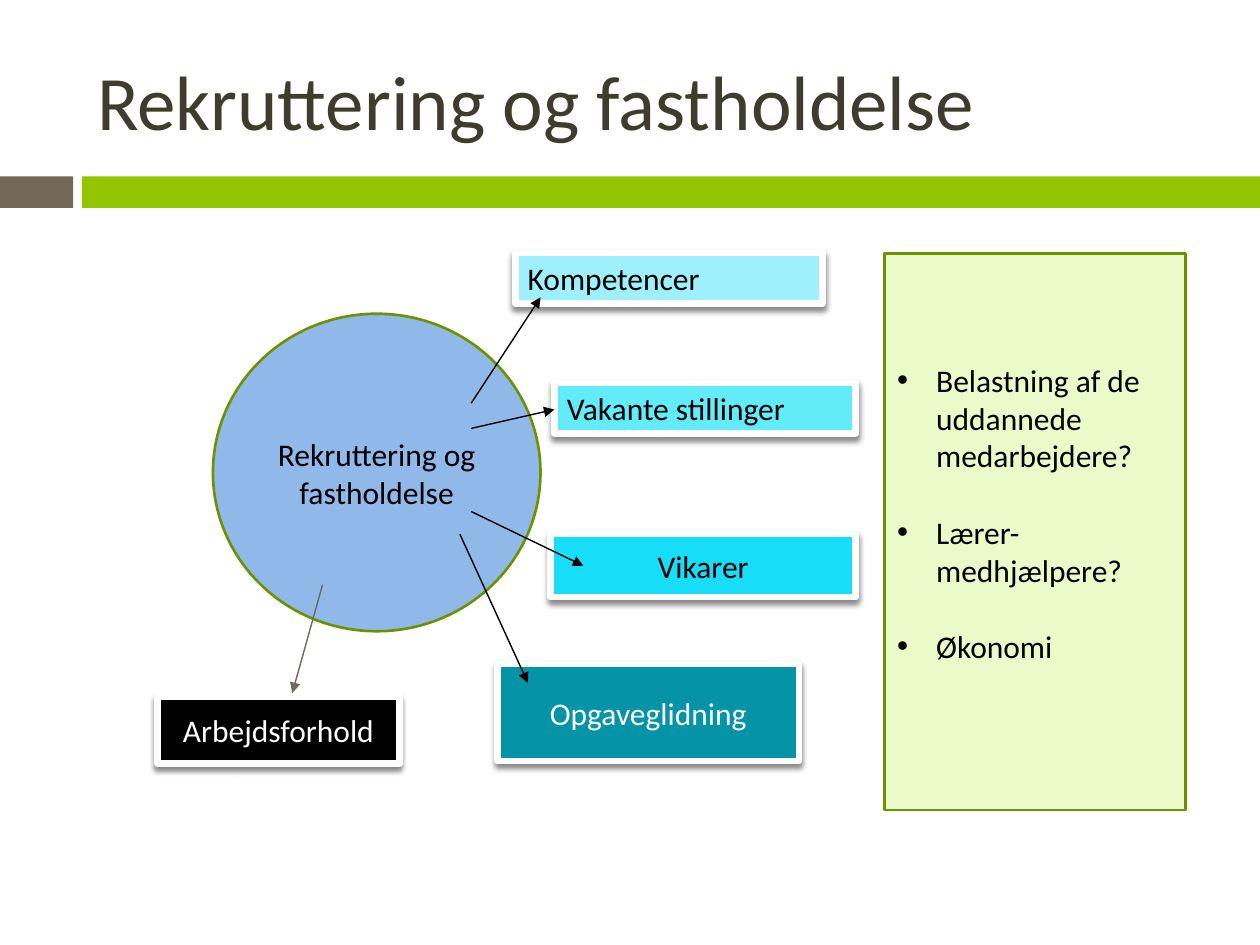
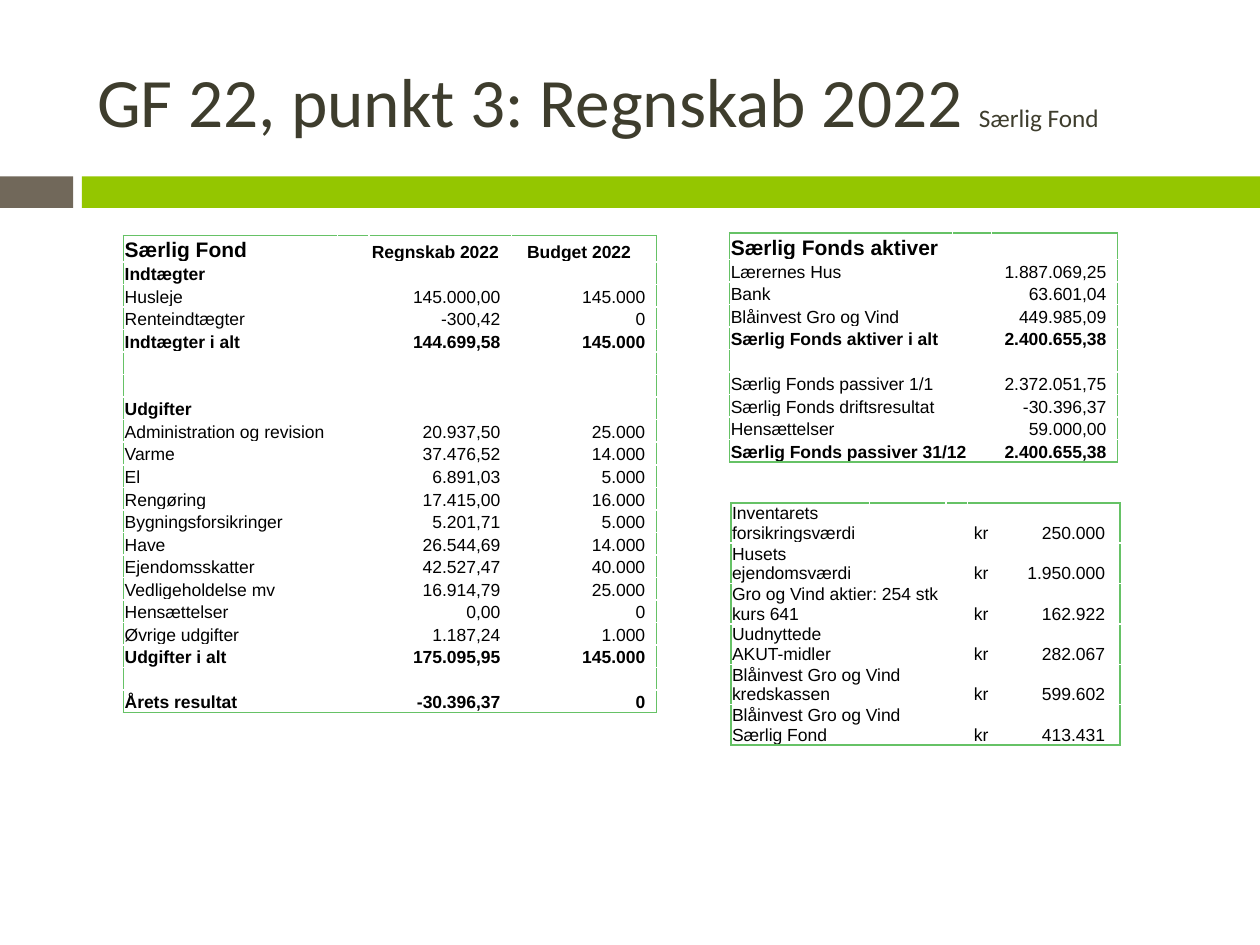
from dataclasses import dataclass

from lxml.etree import SubElement
from pptx import Presentation
from pptx.dml.color import RGBColor
from pptx.enum.shapes import MSO_CONNECTOR, MSO_SHAPE
from pptx.enum.text import MSO_ANCHOR, MSO_AUTO_SIZE, PP_ALIGN
from pptx.oxml import parse_xml
from pptx.oxml.ns import nsdecls, qn
from pptx.util import Inches, Pt


@dataclass(frozen=True)
class Theme:
    """Colours, fonts and type sizes of the slides."""

    font: str = "Calibri"
    table_font: str = "Arial"
    title: str = "3E3D2D"
    text: str = "000000"
    light: str = "FFFFFF"
    grey: str = "71685A"
    green: str = "94C600"
    outline: str = "6D9200"
    panel: str = "EAFAC9"
    circle: str = "90B8E8"
    table_border: str = "66C266"
    title_size: float = 44
    long_title_size: float = 39.6
    subtitle_size: float = 14.4
    body_size: float = 18
    table_title_size: float = 12
    table_size: float = 10


THEME = Theme()
LEFT, CENTER, RIGHT = PP_ALIGN.LEFT, PP_ALIGN.CENTER, PP_ALIGN.RIGHT

TOPICS = [
    ("Kompetencer", (4.09, 2.01, 2.44, 0.4), "9EF1FC", THEME.text, LEFT),
    ("Vakante stillinger", (4.4, 3.04, 2.39, 0.4), "62ECFA", THEME.text, LEFT),
    ("Vikarer", (4.37, 4.24, 2.42, 0.5), "18DDF8", THEME.text, CENTER),
    ("Opgaveglidning", (3.95, 5.27, 2.39, 0.77), "0594A7", THEME.light, CENTER),
    ("Arbejdsforhold", (1.25, 5.53, 1.92, 0.53), "000000", THEME.light, CENTER),
]
ARROWS = [
    ((3.74, 3.2, 4.29, 2.36), THEME.text),
    ((3.74, 3.4, 4.4, 3.25), THEME.text),
    ((3.74, 4.06, 4.63, 4.49), THEME.text),
    ((3.65, 4.24, 4.19, 5.42), THEME.text),
    ((2.56, 4.64, 2.32, 5.5), THEME.grey),
]
QUESTIONS = ["Belastning af de uddannede medarbejdere?", "Lærer-medhjælpere?", "Økonomi"]

ACCOUNTS = [
    ("Særlig Fond", "Regnskab 2022", "Budget 2022"),
    ("Indtægter",),
    ("Husleje", "145.000,00", "145.000"),
    ("Renteindtægter", "-300,42", "0"),
    ("Indtægter i alt", "144.699,58", "145.000"),
    (),
    (),
    ("Udgifter",),
    ("Administration og revision", "20.937,50", "25.000"),
    ("Varme", "37.476,52", "14.000"),
    ("El", "6.891,03", "5.000"),
    ("Rengøring", "17.415,00", "16.000"),
    ("Bygningsforsikringer", "5.201,71", "5.000"),
    ("Have", "26.544,69", "14.000"),
    ("Ejendomsskatter", "42.527,47", "40.000"),
    ("Vedligeholdelse mv", "16.914,79", "25.000"),
    ("Hensættelser", "0,00", "0"),
    ("Øvrige udgifter", "1.187,24", "1.000"),
    ("Udgifter i alt", "175.095,95", "145.000"),
    (),
    ("Årets resultat", "-30.396,37", "0"),
]
BALANCE = [
    ("Særlig Fonds aktiver",),
    ("Lærernes Hus", "1.887.069,25"),
    ("Bank", "63.601,04"),
    ("Blåinvest Gro og Vind", "449.985,09"),
    ("Særlig Fonds aktiver i alt", "2.400.655,38"),
    (),
    ("Særlig Fonds passiver 1/1", "2.372.051,75"),
    ("Særlig Fonds driftsresultat", "-30.396,37"),
    ("Hensættelser", "59.000,00"),
    ("Særlig Fonds passiver 31/12", "2.400.655,38"),
]
HOLDINGS = [
    ("Inventarets forsikringsværdi", "kr\t250.000"),
    ("Husets ejendomsværdi", "kr\t1.950.000"),
    ("Gro og Vind aktier: 254 stk kurs 641", "kr\t162.922"),
    ("Uudnyttede AKUT-midler", "kr\t282.067"),
    ("Blåinvest Gro og Vind kredskassen", "kr\t599.602"),
    ("Blåinvest Gro og Vind Særlig Fond", "kr\t413.431"),
]
BOLD_LABELS = {
    "Indtægter", "Indtægter i alt", "Udgifter", "Udgifter i alt", "Årets resultat",
    "Særlig Fonds aktiver i alt", "Særlig Fonds passiver 31/12",
}


def set_values(target, values):
    """Set each named attribute of the target."""
    for name, value in values.items():
        setattr(target, name, value)


def place(shape, box):
    """Move and size a shape in inches."""
    names = ("left", "top", "width", "height")
    set_values(shape, dict(zip(names, map(Inches, box))))


def add_run(paragraph, text, size, color=THEME.text, font=THEME.font, bold=False):
    """Add one formatted run of text."""
    run = paragraph.add_run()
    run.text = text
    set_values(run.font, {"name": font, "size": Pt(size), "bold": bold})
    run.font.color.rgb = RGBColor.from_string(color)


def paint(shape, fill, line=None, width=1.5):
    """Give a shape its fill and outline."""
    shape.fill.solid()
    shape.fill.fore_color.rgb = RGBColor.from_string(fill)
    if line:
        shape.line.color.rgb = RGBColor.from_string(line)
        shape.line.width = Pt(width)
    else:
        shape.line.fill.background()


def add_figure(slide, kind, box, fill, line=None, width=1.5):
    """Add a flat preset shape."""
    shape = slide.shapes.add_shape(kind, *map(Inches, box))
    shape.shadow.inherit = False
    paint(shape, fill, line, width)
    return shape


def add_label(shape, text, color, alignment):
    """Write one line of text in a shape."""
    set_values(shape.text_frame, {"word_wrap": True, "vertical_anchor": MSO_ANCHOR.MIDDLE})
    paragraph = shape.text_frame.paragraphs[0]
    paragraph.alignment = alignment
    add_run(paragraph, text, THEME.body_size, color)


def add_topic(slide, text, box, fill, color, alignment):
    """Add a white-framed topic box with a soft shadow."""
    shape = add_figure(slide, MSO_SHAPE.RECTANGLE, box, fill, THEME.light, 3.75)
    add_label(shape, text, color, alignment)
    shape.element.spPr.find(qn("a:effectLst")).append(parse_xml(
        f'<a:outerShdw {nsdecls("a")} blurRad="{Pt(3)}" dist="{Pt(2.4)}" dir="5400000" '
        f'rotWithShape="0"><a:srgbClr val="{THEME.text}"><a:alpha val="45000"/>'
        '</a:srgbClr></a:outerShdw>'))


def add_arrow(slide, points, color):
    """Add a thin arrow between two points."""
    arrow = slide.shapes.add_connector(MSO_CONNECTOR.STRAIGHT, *map(Inches, points))
    arrow.line.color.rgb = RGBColor.from_string(color)
    arrow.line.width = Pt(0.79)
    SubElement(arrow.line._get_or_add_ln(), qn("a:tailEnd"), type="triangle")
    SubElement(arrow.element.spPr, qn("a:effectLst"))


def add_bands(slide, master):
    """Put the two colour bands on the slide master."""
    for left, width, color in ((0, 0.58, THEME.grey), (0.65, 9.35, THEME.green)):
        band = add_figure(slide, MSO_SHAPE.RECTANGLE, (left, 1.4, width, 0.25), color)
        master.shapes.element.append(band.element)


def set_title(slide, *runs):
    """Fill the title placeholder with runs of text and size."""
    title = slide.shapes.title
    place(title, (0.67, 0.25, 8.92, 1.08))
    set_values(title.text_frame, {
        "word_wrap": True,
        "auto_size": MSO_AUTO_SIZE.NONE,
        "vertical_anchor": MSO_ANCHOR.MIDDLE,
    })
    paragraph = title.text_frame.paragraphs[0]
    paragraph.alignment = LEFT
    for text, size in runs:
        add_run(paragraph, text, size, THEME.title)


def fill_panel(panel, items):
    """Turn the body placeholder into a framed bullet list."""
    place(panel, (7.02, 2.01, 2.39, 4.42))
    paint(panel, THEME.panel, THEME.outline)
    frame = panel.text_frame
    set_values(frame, {
        "word_wrap": True,
        "auto_size": MSO_AUTO_SIZE.NONE,
        "vertical_anchor": MSO_ANCHOR.MIDDLE,
        "margin_bottom": Inches(0.35),
    })
    for index, item in enumerate(items):
        paragraph = frame.add_paragraph() if index else frame.paragraphs[0]
        set_values(paragraph, {"space_before": Pt(22 if index else 0), "space_after": Pt(0)})
        properties = paragraph._p.get_or_add_pPr()
        properties.set("marL", str(Inches(0.31)))
        properties.set("indent", str(-Inches(0.31)))
        add_run(paragraph, item, THEME.body_size)


def add_border(cell, sides):
    """Draw the named sides of a cell."""
    properties = cell._tc.get_or_add_tcPr()
    for index, side in enumerate(sides):
        properties.insert(index, parse_xml(
            f'<a:ln{side} {nsdecls("a")} w="{Pt(1)}"><a:solidFill>'
            f'<a:srgbClr val="{THEME.table_border}"/></a:solidFill></a:ln{side}>'))


def fill_cell(cell, text, size, bold, alignment):
    """Write and format one table cell."""
    cell.fill.background()
    set_values(cell, {
        "vertical_anchor": MSO_ANCHOR.BOTTOM,
        "margin_left": Inches(0.01),
        "margin_top": Inches(0.01),
        "margin_right": Inches(0.01 if alignment == LEFT else 0.09),
        "margin_bottom": 0,
    })
    paragraph = cell.text_frame.paragraphs[0]
    paragraph.alignment = alignment
    if not text:
        SubElement(paragraph._p, qn("a:endParaRPr"), sz=str(size * 100))
        return
    add_run(paragraph, text, size, font=THEME.table_font, bold=bold)
    if "\t" in text:
        properties = paragraph._p.get_or_add_pPr()
        properties.set("marL", str(Inches(0.04)))
        tabs = SubElement(properties, qn("a:tabLst"))
        SubElement(tabs, qn("a:tab"), pos=str(Inches(1.04)), algn="r")


def add_statement(slide, corner, columns, rows, row_height, has_title=True, merged=()):
    """Add a framed table with labels to the left and amounts to the right."""
    last_row, last_column = len(rows) - 1, len(columns) - 1
    size = (sum(columns), row_height * len(rows))
    table = slide.shapes.add_table(
        len(rows), len(columns), *map(Inches, corner + size)).table
    set_values(table, {"first_row": False, "horz_banding": False})
    for column, width in zip(table.columns, columns):
        column.width = Inches(width)
    for row_index, row in enumerate(rows):
        heading = has_title and row_index == 0
        table.rows[row_index].height = Inches(0.21 if heading else row_height)
        label, *amounts = row or ("",)
        texts = [label] + [""] * (last_column - len(amounts)) + amounts
        for column_index, text in enumerate(texts):
            first = column_index == 0
            cell = table.cell(row_index, column_index)
            alignment = LEFT if first or "\t" in text else CENTER if heading else RIGHT
            type_size = THEME.table_title_size if heading and first else THEME.table_size
            fill_cell(cell, text, type_size, heading or label in BOLD_LABELS, alignment)
            edges = {"L": first, "R": column_index == last_column,
                     "T": row_index == 0, "B": row_index == last_row}
            add_border(cell, [side for side, drawn in edges.items() if drawn])
        if row_index in merged:
            table.cell(row_index, 0).merge(table.cell(row_index, 1))


def build_recruitment(slide):
    """Build the slide on recruitment and retention."""
    set_title(slide, ("Rekruttering og fastholdelse", THEME.title_size))
    circle = add_figure(
        slide, MSO_SHAPE.OVAL, (1.69, 2.49, 2.6, 2.52), THEME.circle, THEME.outline)
    add_label(circle, "Rekruttering og fastholdelse", THEME.text, CENTER)
    for topic in TOPICS:
        add_topic(slide, *topic)
    for points, color in ARROWS:
        add_arrow(slide, points, color)
    fill_panel(slide.placeholders[1], QUESTIONS)


def build_accounts(slide):
    """Build the slide with the accounts of the fund."""
    set_title(slide, ("GF 22, punkt 3: Regnskab 2022 ", THEME.long_title_size),
              ("Særlig Fond", THEME.subtitle_size))
    add_statement(slide, (0.98, 1.87), (1.7, 0.25, 1.13, 1.15), ACCOUNTS, 0.177)
    add_statement(slide, (5.79, 1.85), (1.77, 0.31, 1), BALANCE, 0.177, merged=(9,))
    add_statement(slide, (5.8, 3.99), (1.1, 0.61, 0.17, 1.21), HOLDINGS, 0.32,
                  has_title=False, merged=(2, 4, 5))


def main():
    """Build and save the presentation."""
    presentation = Presentation()
    set_values(presentation, {"slide_width": Inches(10), "slide_height": Inches(7.5)})
    layouts = presentation.slide_layouts
    recruitment = presentation.slides.add_slide(layouts.get_by_name("Title and Content"))
    accounts = presentation.slides.add_slide(layouts.get_by_name("Title Only"))
    add_bands(recruitment, presentation.slide_master)
    build_recruitment(recruitment)
    build_accounts(accounts)
    presentation.save("out.pptx")


if __name__ == "__main__":
    main()
